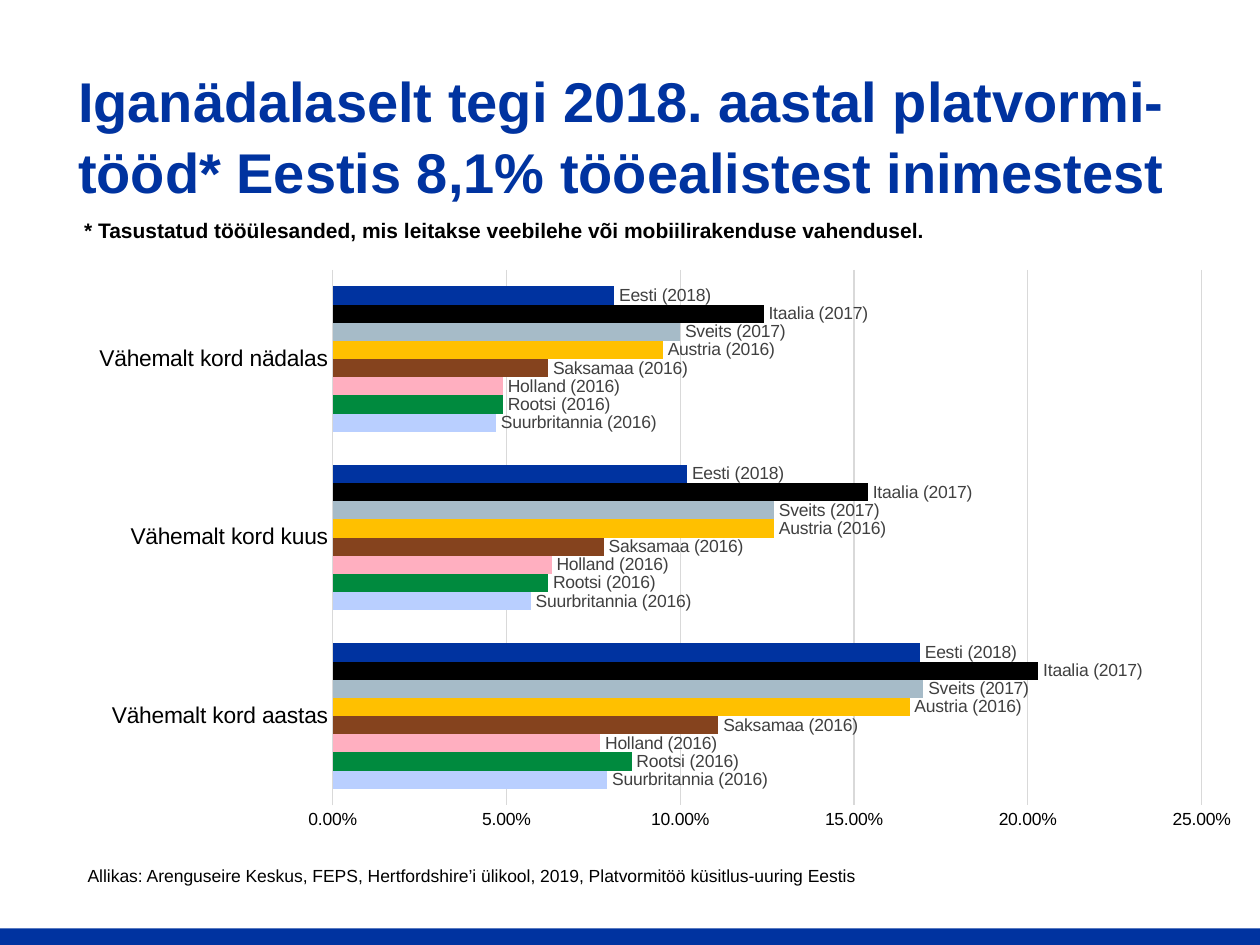
from lxml import etree
from pptx import Presentation
from pptx.chart.data import CategoryChartData
from pptx.dml.color import RGBColor
from pptx.enum.chart import XL_CHART_TYPE, XL_LABEL_POSITION, XL_TICK_MARK
from pptx.enum.shapes import MSO_SHAPE
from pptx.enum.text import MSO_ANCHOR, MSO_AUTO_SIZE, PP_ALIGN
from pptx.oxml.ns import qn
from pptx.util import Pt

BAR_CLUSTERED = XL_CHART_TYPE.BAR_CLUSTERED
OUTSIDE_END = XL_LABEL_POSITION.OUTSIDE_END
NO_TICK = XL_TICK_MARK.NONE
RECTANGLE = MSO_SHAPE.RECTANGLE
MIDDLE = MSO_ANCHOR.MIDDLE
NO_AUTOFIT = MSO_AUTO_SIZE.NONE
LEFT = PP_ALIGN.LEFT

COLORS = {
    "blue": "0033A0", "black": "000000", "grid": "D9D9D9", "label": "404040",
    "light blue": "B9CFFF", "green": "008A3E", "pink": "FFAFC0",
    "brown": "85431E", "yellow": "FFC000", "grey": "A6BBC8",
}
CATEGORIES = ["Vähemalt kord aastas", "Vähemalt kord kuus", "Vähemalt kord nädalas"]
COUNTRIES = [
    ("Suurbritannia (2016)", "light blue", (0.079, 0.057, 0.047)),
    ("Rootsi (2016)", "green", (0.086, 0.062, 0.049)),
    ("Holland (2016)", "pink", (0.077, 0.063, 0.049)),
    ("Saksamaa (2016)", "brown", (0.111, 0.078, 0.062)),
    ("Austria (2016)", "yellow", (0.166, 0.127, 0.095)),
    ("Sveits (2017)", "grey", (0.17, 0.127, 0.1)),
    ("Itaalia (2017)", "black", (0.203, 0.154, 0.124)),
    ("Eesti (2018)", "blue", (0.169, 0.102, 0.081)),
]
NOTES = [
    ("* Tasustatud tööülesanded, mis leitakse veebilehe või mobiilirakenduse vahendusel.",
     (41, 121, 624, 22), 12, True),
    ("Allikas: Arenguseire Keskus, FEPS, Hertfordshire’i ülikool, 2019, "
     "Platvormitöö küsitlus-uuring Eestis", (43, 491, 562, 19), 10, False),
]
PLOT_AREA = {"x": 0.22, "y": 0.02, "w": 0.74, "h": 0.92}
PERCENT = "0.00%"


def rgb(name):
    return RGBColor.from_string(COLORS[name])


def style_font(font, size, color="black", bold=False):
    font.name = "Arial"
    font.size = Pt(size)
    font.bold = bold
    font.color.rgb = rgb(color)


deck = Presentation()
deck.slide_width, deck.slide_height = Pt(720), Pt(540)
page = deck.slides.add_slide(deck.slide_layouts[5])

# Footer band
band = page.shapes.add_shape(RECTANGLE, Pt(0), Pt(530.6), Pt(720), Pt(9.4))
band.shadow.inherit = False
band.fill.solid()
band.fill.fore_color.rgb = rgb("blue")
band.line.fill.background()

# Title
title = page.shapes.title
title.left, title.top, title.width, title.height = Pt(37.4), Pt(31.7), Pt(674.6), Pt(90)
frame = title.text_frame
frame.text = "Iganädalaselt tegi 2018. aastal platvormi-\vtööd* Eestis 8,1% tööealistest inimestest"
frame.word_wrap = True
frame.auto_size = NO_AUTOFIT
frame.vertical_anchor = MIDDLE
para = frame.paragraphs[0]
para.alignment = LEFT
para.line_spacing = 1.05
style_font(para.font, 32, "blue", True)

# Bar chart
data = CategoryChartData(number_format=PERCENT)
data.categories = CATEGORIES
for name, color, values in COUNTRIES:
    data.add_series(name, values)
chart = page.shapes.add_chart(
    BAR_CLUSTERED, Pt(42.5), Pt(147.6), Pt(671), Pt(332.6), data).chart
chart.has_legend = False
chart.has_title = False
style_font(chart.font, 10)

plot = chart.plots[0]
plot.gap_width = 182
plot.overlap = 0
plot.vary_by_categories = False
for series, (name, color, values) in zip(plot.series, COUNTRIES):
    series.format.fill.solid()
    series.format.fill.fore_color.rgb = rgb(color)
    series.invert_if_negative = False
    labels = series.data_labels
    labels.show_series_name = True
    labels.show_value = False
    labels.position = OUTSIDE_END
    style_font(labels.font, 10, "label")

# Axes
category_axis, value_axis = chart.category_axis, chart.value_axis
for axis, size in ((category_axis, 13), (value_axis, 10)):
    axis.major_tick_mark = axis.minor_tick_mark = NO_TICK
    style_font(axis.tick_labels.font, size)
value_axis.minimum_scale, value_axis.maximum_scale = 0, 0.25
value_axis.major_unit = 0.05
value_axis.tick_labels.number_format = PERCENT
value_axis.tick_labels.number_format_is_linked = False
value_axis.format.line.fill.background()
for line in (category_axis.format.line, value_axis.major_gridlines.format.line):
    line.color.rgb = rgb("grid")
    line.width = Pt(0.75)

# Fixed plot area, as fractions of the chart
plot_area = chart.element.find(".//" + qn("c:plotArea"))
layout = plot_area.find(qn("c:layout"))
if layout is None:
    layout = etree.Element(qn("c:layout"))
    plot_area.insert(0, layout)
manual = etree.SubElement(layout, qn("c:manualLayout"))
settings = {"layoutTarget": "inner", "xMode": "edge", "yMode": "edge", **PLOT_AREA}
for tag, value in settings.items():
    etree.SubElement(manual, qn("c:" + tag)).set("val", str(value))

# Footnote and source
for text, (left, top, width, height), size, bold in NOTES:
    box = page.shapes.add_textbox(Pt(left), Pt(top), Pt(width), Pt(height))
    box.text_frame.word_wrap = True
    box.text_frame.text = text
    style_font(box.text_frame.paragraphs[0].font, size, bold=bold)

deck.save("out.pptx")
